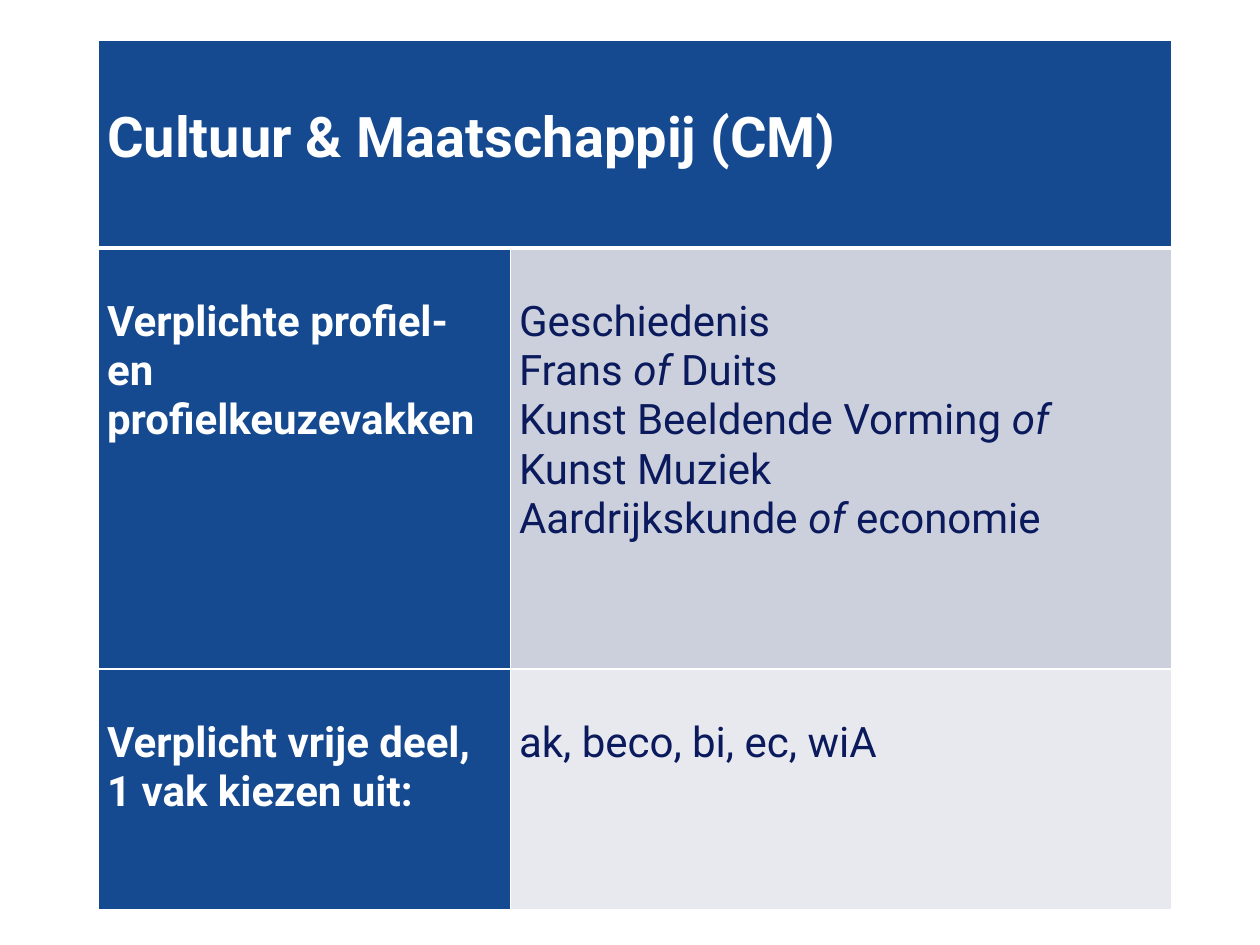
from lxml import etree
from pptx import Presentation
from pptx.dml.color import RGBColor
from pptx.enum import text
from pptx.oxml import ns
from pptx.util import Pt

WHITE, BLUE, NAVY = "FFFFFF", "154A91", "0A1A5C"
GREY, LIGHT_GREY = "CCD0DC", "E8E9EE"
LINE_HEIGHT = 1.17


def color(hex_string):
    return RGBColor.from_string(hex_string)


class SlideBuilder:
    font = "Roboto"
    side_margin = 5

    def __init__(self, slide):
        self.slide = slide

    def table(self, left, top, widths, heights):
        shape = self.slide.shapes.add_table(
            len(heights), len(widths), Pt(left), Pt(top), Pt(sum(widths)), Pt(sum(heights)))
        table = shape.table
        table.first_row = table.horz_banding = False
        for column, width in zip(table.columns, widths):
            column.width = Pt(width)
        for row, height in zip(table.rows, heights):
            row.height = Pt(height)
        return table

    def borders(self, cell, **widths):
        """Draw white borders, 1 pt wide unless widths names another for L, R, T or B."""
        properties = cell._tc.get_or_add_tcPr()
        for index, side in enumerate("LRTB"):
            line = etree.Element(ns.qn(f"a:ln{side}"), w=str(Pt(widths.get(side, 1))))
            fill = etree.SubElement(line, ns.qn("a:solidFill"))
            etree.SubElement(fill, ns.qn("a:srgbClr"), val=WHITE)
            properties.insert(index, line)

    def cell(self, cell, lines, fill, font_color, size=24, bold=False):
        """Fill a cell; each line is a list of runs, every second one italic."""
        cell.fill.solid()
        cell.fill.fore_color.rgb = color(fill)
        cell.margin_left = cell.margin_right = Pt(self.side_margin)
        cell.margin_top, cell.margin_bottom = Pt(size * LINE_HEIGHT), 0
        cell.vertical_anchor = text.MSO_ANCHOR.TOP
        frame = cell.text_frame
        for number, runs in enumerate(lines):
            paragraph = frame.add_paragraph() if number else frame.paragraphs[0]
            for index, words in enumerate(runs):
                run = paragraph.add_run()
                run.text = words
                run.font.name = self.font
                run.font.size = Pt(size)
                run.font.bold = bold
                run.font.italic = index % 2 == 1
                run.font.color.rgb = color(font_color)


def main():
    presentation = Presentation()
    presentation.slide_width, presentation.slide_height = Pt(720), Pt(540)
    builder = SlideBuilder(presentation.slides.add_slide(presentation.slide_layouts[6]))

    table = builder.table(56.2, 23, [235.4, 378], [118.8, 240.5, 137.5])
    title = table.cell(0, 0)
    title.merge(table.cell(0, 1))
    builder.cell(title, [["Cultuur & Maatschappij (CM)"]], BLUE, WHITE, size=32, bold=True)

    subjects = [
        ("Verplichte profiel- en profielkeuzevakken", GREY, [
            ["Geschiedenis"],
            ["Frans ", "of", " Duits"],
            ["Kunst Beeldende Vorming ", "of", " Kunst Muziek"],
            ["Aardrijkskunde ", "of", " economie"],
        ]),
        ("Verplicht vrije deel, 1 vak kiezen uit:", LIGHT_GREY, [["ak, beco, bi, ec, wiA"]]),
    ]
    for row, (heading, fill, lines) in enumerate(subjects, start=1):
        builder.cell(table.cell(row, 0), [[heading]], BLUE, WHITE, bold=True)
        builder.cell(table.cell(row, 1), lines, fill, NAVY)

    row_borders = [{"B": 3}, {"T": 3}, {}]
    for row, widths in enumerate(row_borders):
        for column in range(2):
            builder.borders(table.cell(row, column), **widths)

    presentation.save("out.pptx")


if __name__ == "__main__":
    main()
